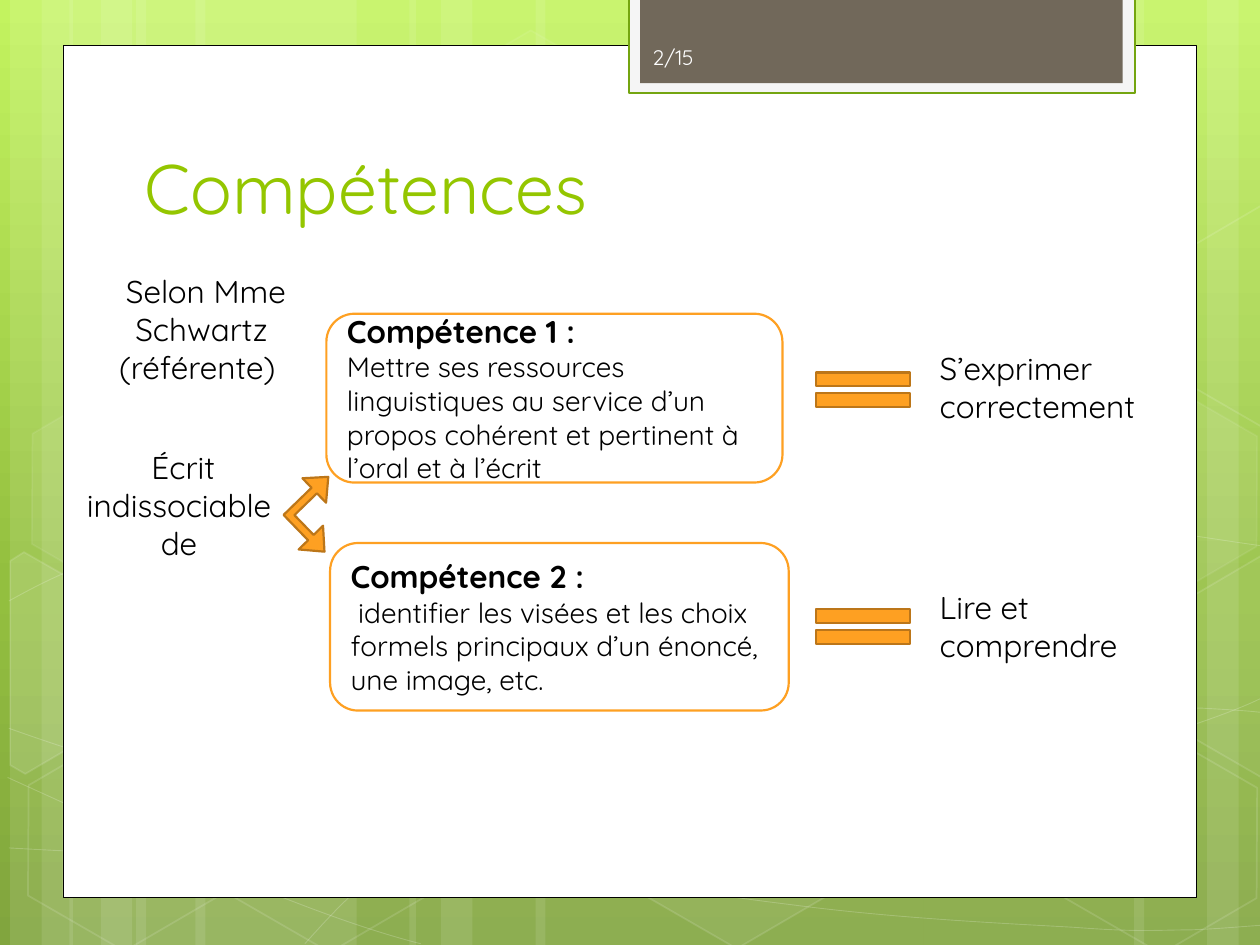
from copy import deepcopy
from math import cos, radians, sin

from pptx import Presentation
from pptx.dml.color import RGBColor
from pptx.enum import shapes, text
from pptx.oxml import ns, xmlchemy
from pptx.util import Inches, Pt

FONT = "Quicksand"
WHITE, BLACK, GREEN, ORANGE, BROWN = "FFFFFF", "000000", "94C600", "FEA022", "BC7619"
KIND = shapes.MSO_SHAPE
TILT = 30

STRIPS = [(left + shift, width, 0) for shift in (0, 0.47)
          for left, width in ((1.08, 1.75), (0.08, 0.5), (0.33, 0.83))]
STRIPS += [(7.33, 1.75, 180), (9.58, 0.5, 180), (9, 0.83, 180),
           (4.25, 3.08, 0), (3.25, 0.5, 0), (3.5, 0.83, 0)]

CURVES = [
    [(0.07, 6.73), (0.61, 6.76), (1.15, 6.79), (1.9, 6.78), (2.65, 6.77), (3.58, 6.75),
     (4.58, 6.65), (5.58, 6.55), (7, 6.36), (7.92, 6.17), (8.83, 5.98), (9.77, 5.68),
     (10.07, 5.51)],
    [(0.07, 4.77), (0.36, 4.61), (0.65, 4.46), (1.21, 4.31), (1.78, 4.16), (2.59, 3.94),
     (3.47, 3.87), (4.36, 3.8), (5.44, 3.79), (6.54, 3.87), (7.64, 3.95), (9.47, 4.26),
     (10.07, 4.34)],
    [(0.06, 6.17), (1.27, 6.72), (2.47, 7.27), (3.34, 7.49)],
    [(0.07, 5.78), (0.38, 5.89), (0.7, 6), (1.28, 6.16), (1.86, 6.31), (2.73, 6.56),
     (3.57, 6.73), (4.4, 6.9), (5.45, 7.08), (6.28, 7.18), (7.11, 7.29), (8, 7.33),
     (8.53, 7.36), (9.05, 7.4), (9.19, 7.38), (9.45, 7.38), (9.71, 7.37), (9.89, 7.35),
     (10.07, 7.34)],
    [(2.42, 7.49), (2.6, 7.29), (2.78, 7.09), (3.02, 6.91), (3.26, 6.73), (3.6, 6.53),
     (3.88, 6.39), (4.16, 6.25), (4.33, 6.19), (4.7, 6.09), (5.06, 5.99), (5.73, 5.85),
     (6.08, 5.78), (6.44, 5.71), (6.49, 5.71), (6.8, 5.69), (7.11, 5.66), (7.6, 5.63),
     (7.94, 5.62), (8.29, 5.61), (8.86, 5.62), (8.86, 5.62), (8.86, 5.62), (9.53, 5.62),
     (9.53, 5.62), (9.71, 5.63), (9.88, 5.64), (9.97, 5.65), (10.06, 5.66),
     (10.03, 5.65), (10.06, 5.66)],
]

HEXAGONS = [
    (3.34, 0.36, 4, 8), (4.97, 5.89, 6, 12), (0.11, 5.91, None, 12),
    (0.14, 3.12, 7, 8), (1.74, 5.92, None, 12), (7.53, 4.53, 10, 12),
    (8.34, 5.93, None, 12), (8.34, 3.14, 7, 8),
]

CUT_HEXAGONS = [
    ((0.36, 5.35), 10, [(0.08, 4.45), (0.19, 4.38), (0.96, 4.82), (0.95, 5.7),
                        (0.2, 6.14), (0.08, 6.07)]),
    ((9.85, 5.2), 4, [(9.26, 4.85), (10.01, 4.41), (10.09, 4.46), (10.09, 6.13),
                      (10.02, 6.17), (9.26, 5.73)]),
    ((9.85, 2.41), None, [(9.26, 2.07), (10.01, 1.63), (10.1, 1.68), (10.09, 3.35),
                          (10.02, 3.39), (9.26, 2.95)]),
]


def rgb(value):
    return RGBColor.from_string(value)


def set_opacity(shape, route, percent):
    color = shape.element.spPr.find(f"{route}/{ns.qn('a:srgbClr')}")
    alpha = xmlchemy.OxmlElement("a:alpha")
    alpha.set("val", str(percent * 1000))
    color.append(alpha)


def style(shape, fill=None, line=None, width=1.25, fill_opacity=100, line_opacity=100):
    shape.shadow.inherit = False
    solid = ns.qn("a:solidFill")
    if fill:
        shape.fill.solid()
        shape.fill.fore_color.rgb = rgb(fill)
        if fill_opacity < 100:
            set_opacity(shape, solid, fill_opacity)
    else:
        shape.fill.background()
    if line:
        shape.line.color.rgb = rgb(line)
        shape.line.width = Pt(width)
        if line_opacity < 100:
            set_opacity(shape, f"{ns.qn('a:ln')}/{solid}", line_opacity)
    else:
        shape.line.fill.background()


def add_shape(page, kind, at, fill=None, line=None, rotation=0, adjust=(), **looks):
    shape = page.shapes.add_shape(kind, *map(Inches, at))
    shape.rotation = rotation
    for index, value in enumerate(adjust):
        shape.adjustments[index] = value
    style(shape, fill, line, **looks)


def add_outline(page, points, closed, **looks):
    start, *others = [(Inches(x), Inches(y)) for x, y in points]
    builder = page.shapes.build_freeform(*start)
    builder.add_line_segments(others, close=closed)
    shape = builder.convert_to_shape()
    style(shape, **looks)
    return shape


def add_curve(page, points, **looks):
    shape = add_outline(page, points, False, **looks)
    lines = list(shape.element.iter(ns.qn("a:lnTo")))
    for index in range(0, len(lines), 3):
        bend = xmlchemy.OxmlElement("a:cubicBezTo")
        lines[index].addprevious(bend)
        for line in lines[index:index + 3]:
            bend.append(line[0])
            line.getparent().remove(line)


def turn_back(point, center):
    angle = radians(TILT)
    x, y = point[0] - center[0], point[1] - center[1]
    return (center[0] + x * cos(angle) + y * sin(angle),
            center[1] - x * sin(angle) + y * cos(angle))


def format_para(para, size, color=BLACK, bold=False, align=text.PP_ALIGN.LEFT):
    para.alignment = align
    for span in para.runs:
        span.font.name = FONT
        span.font.size = Pt(size)
        span.font.bold = bold
        span.font.color.rgb = rgb(color)


def add_label(page, at, words, size=18, color=BLACK, align=text.PP_ALIGN.LEFT):
    box = page.shapes.add_textbox(*map(Inches, at))
    frame = box.text_frame
    frame.word_wrap = True
    frame.text = words
    for para in frame.paragraphs:
        format_para(para, size, color, align=align)
    return frame


def add_skill(page, at, heading, detail):
    box = page.shapes.add_shape(KIND.ROUNDED_RECTANGLE, *map(Inches, at))
    style(box, WHITE, ORANGE)
    frame = box.text_frame
    frame.word_wrap = True
    frame.vertical_anchor = text.MSO_ANCHOR.MIDDLE
    frame.text = f"{heading}\n{detail}"
    format_para(frame.paragraphs[0], 18, bold=True)
    format_para(frame.paragraphs[1], 16)


def paint_background(page):
    fill = page.background.fill
    fill.gradient()
    fill.gradient_angle = 270
    stops = page.element.find(f".//{ns.qn('a:gsLst')}")
    stops.append(deepcopy(stops[-1]))
    colors = ((0, "C3F35F"), (0.62, "93BF3F"), (1, "81A53E"))
    for stop, (position, color) in zip(fill.gradient_stops, colors):
        stop.position = position
        stop.color.rgb = rgb(color)


def add_decor(page):
    for left, width, rotation in STRIPS:
        add_shape(page, KIND.RECTANGLE, (left, 0, width, 7.5), WHITE, rotation=rotation,
                  fill_opacity=10)
    for points in CURVES:
        add_curve(page, points, line=WHITE, width=0.5, line_opacity=20)
    for left, top, opacity, edge in HEXAGONS:
        add_shape(page, KIND.HEXAGON, (left, top, 1.75, 1.52), WHITE if opacity else None,
                  WHITE, TILT, (0.285, 1.155), width=1, fill_opacity=opacity,
                  line_opacity=edge)
    for center, opacity, points in CUT_HEXAGONS:
        upright = [turn_back(point, center) for point in points]
        shape = add_outline(page, upright, True, fill=WHITE if opacity else None, line=WHITE,
                            width=1, fill_opacity=opacity, line_opacity=12)
        shape.rotation = TILT


def add_panels(page):
    add_shape(page, KIND.RECTANGLE, (0.5, 0.36, 9, 6.76), WHITE, BLACK, width=0.5)
    add_shape(page, KIND.RECTANGLE, (4.99, -0.02, 4.02, 0.76), "F5F5F5", "74A510")
    add_shape(page, KIND.RECTANGLE, (5.08, -0.02, 3.83, 0.68), "71685A")


def place_title(page, words):
    title = page.shapes.title
    title.element.getparent().append(title.element)
    title.left, title.top, title.width, title.height = map(Inches, (1.05, 0.61, 7.68, 1.25))
    title.text_frame.text = words
    title.text_frame.vertical_anchor = text.MSO_ANCHOR.BOTTOM
    format_para(title.text_frame.paragraphs[0], 40, GREEN)


def main():
    deck = Presentation()
    deck.slide_width, deck.slide_height = Inches(10), Inches(7.5)
    page = deck.slides.add_slide(deck.slide_layouts[5])
    paint_background(page)
    add_decor(page)
    add_panels(page)
    place_title(page, "Compétences")
    number = add_label(page, (5.08, 0.25, 1.46, 0.4), "2/15", 12, "FEFEFE")
    number.vertical_anchor = text.MSO_ANCHOR.MIDDLE

    add_skill(page, (2.59, 2.49, 3.62, 1.34), "Compétence 1 :",
              "Mettre ses ressources linguistiques au service d’un propos cohérent "
              "et pertinent à l’oral et à l’écrit")
    add_skill(page, (2.62, 4.31, 3.64, 1.33), "Compétence 2 :",
              " identifier les visées et les choix formels principaux d’un énoncé, "
              "une image, etc.")
    for top in (4.74, 2.86):
        add_shape(page, KIND.MATH_EQUAL, (6.34, top, 1.02, 0.47), ORANGE, BROWN)
    add_label(page, (7.36, 2.72, 2.91, 0.71), "S’exprimer correctement")
    add_label(page, (7.36, 4.62, 1.97, 0.71), "Lire et\ncomprendre")

    center = text.PP_ALIGN.CENTER
    add_label(page, (0.49, 3.51, 1.93, 1.01), "Écrit indissociable \nde ", align=center)
    add_shape(page, KIND.LEFT_UP_ARROW, (2.21, 3.81, 0.57, 0.54), ORANGE, BROWN, 135.9,
              (0.113, 0.25, 0.288))
    add_label(page, (0.78, 2.11, 1.64, 1.01), " Selon Mme Schwartz (référente) ", align=center)
    deck.save("out.pptx")


if __name__ == "__main__":
    main()
